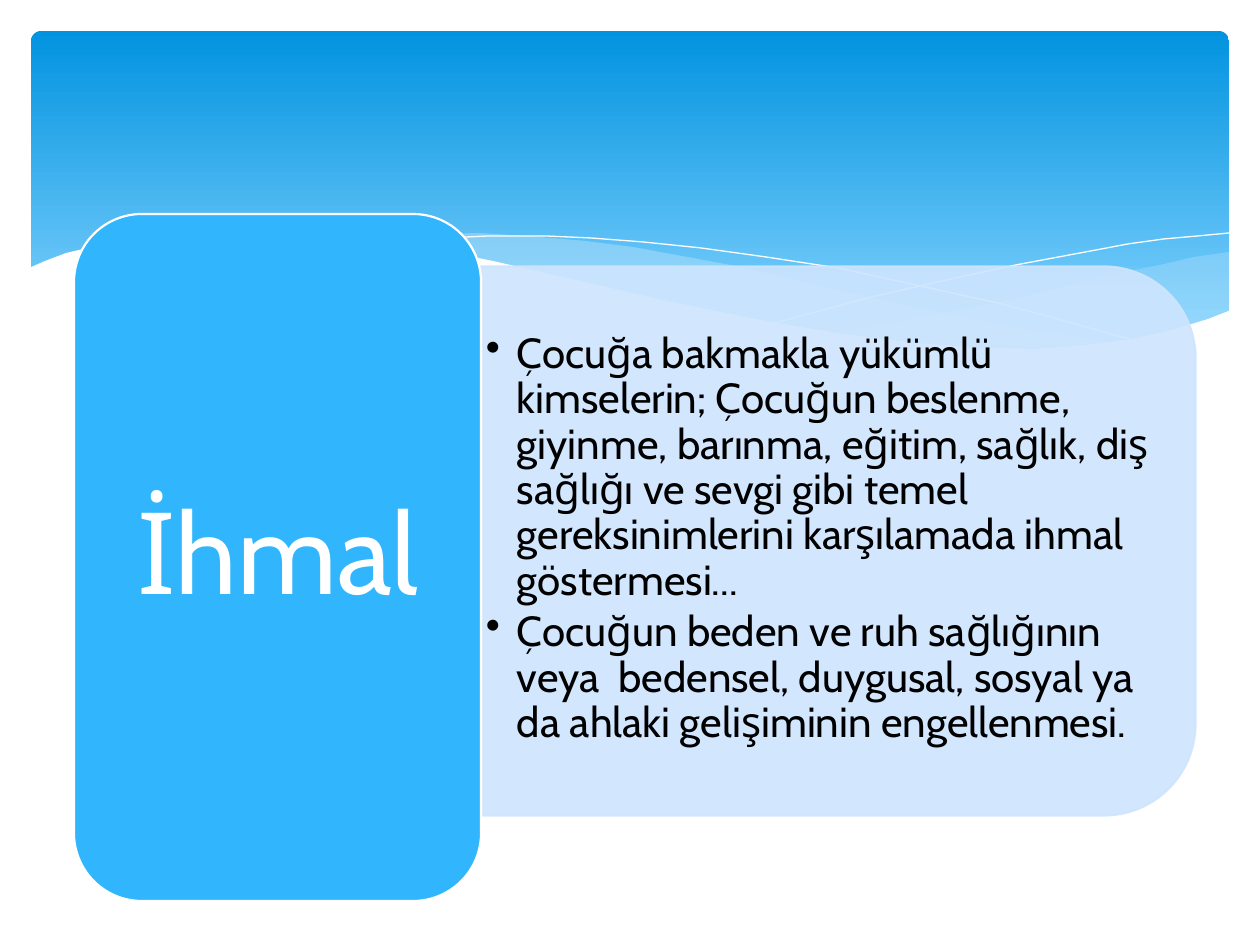
"""Build the slide that defines child neglect on a wavy blue banner."""
from dataclasses import dataclass
from typing import Optional

import pptx
import pptx.dml.color
import pptx.enum.shapes
import pptx.enum.text
import pptx.oxml.ns
import pptx.util
from lxml import etree

SCALE = 914400 / 126
FONT = "Cabin"
COLORS = {
    "banner_top": "0293E0",
    "banner_bottom": "83D3FE",
    "wave": "C6E7FC",
    "white": "FFFFFF",
    "panel": "CEE5FE",
    "label": "31B6FD",
    "black": "000000",
}
SHAPES = pptx.enum.shapes.MSO_SHAPE
ALIGN = pptx.enum.text.PP_ALIGN


@dataclass(frozen=True)
class Curve:
    points: tuple[tuple[int, int], ...]
    fill: Optional[str] = None
    line: Optional[str] = None
    opacity: int = 100


@dataclass(frozen=True)
class Block:
    kind: int
    box: tuple[int, int, int, int]
    fill: str
    line: Optional[str] = None
    opacity: int = 100
    rotation: int = 0


CURVES = (
    Curve(((1229, 252), (1194, 257), (1160, 265), (1123, 272), (1085, 281),
           (1014, 299), (949, 312), (890, 324), (833, 334), (871, 339),
           (906, 343), (954, 348), (1012, 350), (1063, 349), (1110, 344),
           (1150, 336), (1187, 326), (1213, 318), (1229, 311)),
          fill="wave", opacity=29),
    Curve(((1125, 344), (1091, 339), (1017, 328), (934, 311), (842, 291),
           (793, 280), (736, 266), (682, 256), (633, 247), (586, 241),
           (529, 236), (479, 233), (433, 234), (394, 237), (360, 241),
           (407, 247), (456, 256), (509, 266), (566, 280), (668, 302),
           (736, 318), (799, 329), (857, 338), (910, 345), (959, 349),
           (1003, 350), (1056, 350), (1092, 348)),
          fill="wave", opacity=40),
    Curve(((389, 246), (413, 242), (445, 238), (488, 236), (546, 236),
           (591, 238), (643, 242), (701, 248), (766, 257), (838, 268),
           (916, 285), (1002, 304), (1047, 316), (1143, 343)), line="white"),
    Curve(((772, 324), (823, 310), (876, 296), (942, 281), (1016, 265),
           (1091, 251), (1128, 244), (1164, 239), (1198, 236), (1229, 233)),
          line="white"),
    Curve(((1231, 310), (1208, 319), (1172, 330), (1133, 339), (1087, 345),
           (1037, 349), (980, 348), (915, 343), (842, 334), (760, 320),
           (667, 301), (563, 277), (493, 261), (428, 248), (368, 239),
           (315, 234), (266, 232), (223, 232), (184, 233), (134, 238),
           (96, 246), (66, 253), (45, 261), (29, 268), (29, 415), (1231, 415)),
          fill="white"),
)
PANEL = Block(SHAPES.ROUND_2_SAME_RECTANGLE, (559, 179, 549, 724), "panel",
              line="panel", opacity=90, rotation=90)
LABEL = Block(SHAPES.ROUNDED_RECTANGLE, (74, 214, 407, 687), "label", line="white")
DEFINITION = (
    "Çocuğa bakmakla yükümlü  kimselerin; Çocuğun beslenme, giyinme, barınma, "
    "eğitim, sağlık, diş sağlığı ve sevgi gibi temel gereksinimlerini karşılamada "
    "ihmal göstermesi...",
    "Çocuğun beden ve ruh sağlığının veya  bedensel, duygusal, sosyal ya da ahlaki "
    "gelişiminin engellenmesi.",
)


def px(length: int) -> int:
    return round(length * SCALE)


def rgb(color: str) -> pptx.dml.color.RGBColor:
    return pptx.dml.color.RGBColor.from_string(COLORS[color])


def style(shape, fill: Optional[str], line: Optional[str], opacity: int, width: float) -> None:
    shape.shadow.inherit = False
    for paint, color in ((shape.fill, fill), (shape.line.fill, line)):
        if color is None:
            paint.background()
            continue
        paint.solid()
        paint.fore_color.rgb = rgb(color)
    if line:
        shape.line.width = pptx.util.Pt(width)
    if opacity < 100:
        for tint in shape.element.spPr.iter(pptx.oxml.ns.qn("a:srgbClr")):
            etree.SubElement(tint, pptx.oxml.ns.qn("a:alpha"), val=str(opacity * 1000))


def draw_banner(slide) -> None:
    banner = slide.shapes.add_shape(SHAPES.ROUNDED_RECTANGLE, *map(px, (31, 31, 1198, 340)))
    banner.adjustments[0] = 0.03
    style(banner, None, None, 100, 0)
    banner.fill.gradient()
    banner.fill.gradient_angle = 270
    stops = zip(banner.fill.gradient_stops, (0, 0.9), ("banner_top", "banner_bottom"))
    for stop, position, color in stops:
        stop.position = position
        stop.color.rgb = rgb(color)


def draw_curve(slide, curve: Curve) -> None:
    outline = slide.shapes.build_freeform(*curve.points[0], scale=SCALE)
    outline.add_line_segments(curve.points[1:], close=curve.fill is not None)
    style(outline.convert_to_shape(), curve.fill, curve.line, curve.opacity, 0)


def draw_block(slide, block: Block) -> None:
    body = slide.shapes.add_shape(block.kind, *map(px, block.box))
    body.rotation = block.rotation
    style(body, block.fill, block.line, block.opacity, 1.25)


def write(slide, paragraphs: tuple[str, ...], *, box: tuple[int, int, int, int],
          size: int, color: str, align: int, after: float,
          insets: tuple[int, int] = (13, 6), bullet_indent: int = 0) -> None:
    frame = slide.shapes.add_textbox(*map(px, box)).text_frame
    frame.word_wrap = True
    frame.vertical_anchor = pptx.enum.text.MSO_ANCHOR.MIDDLE
    frame.margin_left = frame.margin_right = px(insets[0])
    frame.margin_top = frame.margin_bottom = px(insets[1])
    for index, text in enumerate(paragraphs):
        paragraph = frame.add_paragraph() if index else frame.paragraphs[0]
        paragraph.alignment = align
        paragraph.line_spacing = 0.9
        paragraph.space_after = pptx.util.Pt(after)
        run = paragraph.add_run()
        run.text = text
        run.font.name = FONT
        run.font.size = pptx.util.Pt(size)
        run.font.color.rgb = rgb(color)
        if bullet_indent:
            properties = paragraph._p.get_or_add_pPr()
            properties.set("marL", str(px(bullet_indent)))
            properties.set("indent", str(-px(bullet_indent)))
            etree.SubElement(properties, pptx.oxml.ns.qn("a:buChar"), char="•")


def main() -> None:
    deck = pptx.Presentation()
    deck.slide_width, deck.slide_height = px(1260), px(945)
    slide = deck.slides.add_slide(deck.slide_layouts[6])
    draw_banner(slide)
    for curve in CURVES:
        draw_curve(slide, curve)
    draw_block(slide, PANEL)
    write(slide, DEFINITION, box=(473, 292, 697, 495), size=24, color="black",
          align=ALIGN.LEFT, after=3.6, bullet_indent=31)
    draw_block(slide, LABEL)
    write(slide, ("İhmal",), box=(94, 234, 368, 648), size=65, color="white",
          align=ALIGN.CENTER, after=22.75, insets=(34, 18))
    deck.save("out.pptx")


if __name__ == "__main__":
    main()
